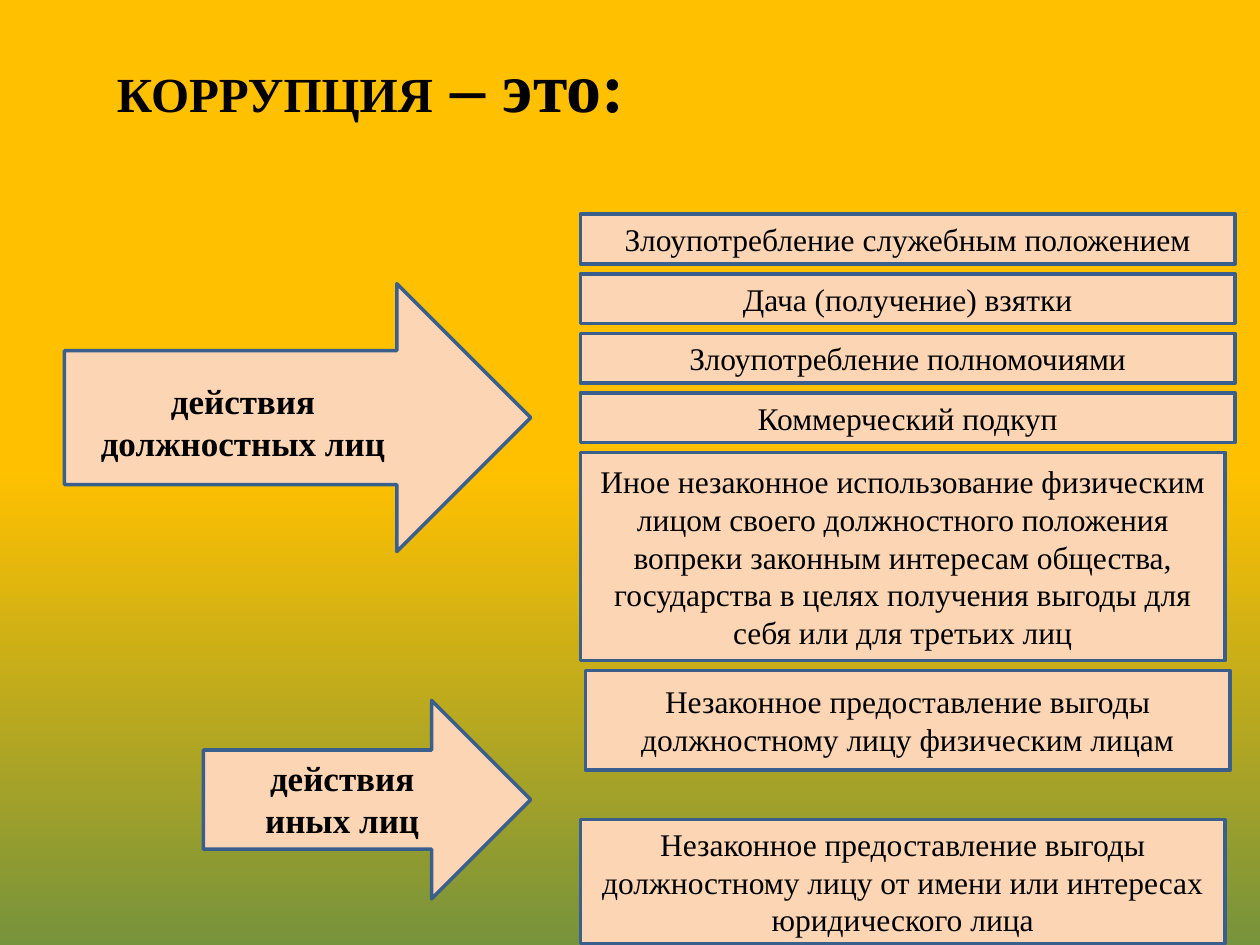
from pptx import Presentation
from pptx.dml.color import RGBColor
from pptx.enum.shapes import MSO_SHAPE
from pptx.enum.text import MSO_ANCHOR, PP_ALIGN
from pptx.util import Cm, Pt

RECTANGLE, ARROW = MSO_SHAPE.RECTANGLE, MSO_SHAPE.RIGHT_ARROW
TOP, MIDDLE = MSO_ANCHOR.TOP, MSO_ANCHOR.MIDDLE
LEFT, CENTER = PP_ALIGN.LEFT, PP_ALIGN.CENTER

FONT = "Times New Roman"
COLOURS = {
    "text": "000000",
    "fill": "FCD5B5",
    "line": "3A5F8C",
    "sky": "FFC000",
    "ground": "77933C",
}

TITLE = [("КОРРУПЦИЯ", 28), (" – это:", 40)]

# arrow place, label, label place (left, top, width, height in cm)
ACTORS = [
    ((1.3, 5.72, 9.4, 5.4), "действия должностных лиц", (1.7, 7.52, 6.4, 1.96)),
    ((4.1, 14.12, 6.6, 4.0), "действия иных лиц", (4.3, 15.12, 5.2, 1.96)),
]

# text, left, width, height, gap below (cm)
STACK_TOP = 4.32
ACTS = [
    ("Злоупотребление служебным положением", 11.7, 13.2, 1, 0.2),
    ("Дача (получение) взятки", 11.7, 13.2, 1, 0.2),
    ("Злоупотребление полномочиями", 11.7, 13.2, 1, 0.2),
    ("Коммерческий подкуп", 11.7, 13.2, 1, 0.2),
    ("Иное незаконное использование физическим лицом своего должностного "
     "положения вопреки законным интересам общества, государства в целях "
     "получения выгоды для себя или для третьих лиц", 11.7, 13, 4.2, 0.2),
    ("Незаконное предоставление выгоды должностному лицу физическим лицам",
     11.8, 13, 2, 1),
    ("Незаконное предоставление выгоды должностному лицу от имени или "
     "интересах юридического лица", 11.7, 13, 2.5, 0),
]


def colour(name):
    return RGBColor.from_string(COLOURS[name])


def write(box, spans, bold, align, anchor):
    """Fill a box with one paragraph made of (text, size) spans."""
    frame = box.text_frame
    frame.word_wrap = True
    frame.vertical_anchor = anchor
    para = frame.paragraphs[0]
    para.alignment = align
    for text, size in spans:
        span = para.add_run()
        span.text = text
        span.font.name = FONT
        span.font.size = Pt(size)
        span.font.bold = bold
        span.font.color.rgb = colour("text")


def add_figure(page, kind, place):
    figure = page.shapes.add_shape(kind, *map(Cm, place))
    figure.shadow.inherit = False
    figure.fill.solid()
    figure.fill.fore_color.rgb = colour("fill")
    figure.line.color.rgb = colour("line")
    figure.line.width = Pt(2)
    return figure


def paint_background(page):
    fill = page.background.fill
    fill.gradient()
    fill.gradient_angle = 270
    for stop, name, position in zip(fill.gradient_stops, ("sky", "ground"), (0.5, 1)):
        stop.color.rgb = colour(name)
        stop.position = position


def add_title(page):
    title = page.shapes.title
    title.left, title.top, title.width, title.height = map(Cm, (2.1, 0.53, 18.4, 3.7))
    title.text_frame.margin_top = Cm(0.32)
    write(title, TITLE, True, LEFT, TOP)


def main():
    deck = Presentation()
    deck.slide_width, deck.slide_height = Cm(25.4), Cm(19.05)
    page = deck.slides.add_slide(deck.slide_layouts[5])
    paint_background(page)
    add_title(page)

    for arrow_place, label, label_place in ACTORS:
        add_figure(page, ARROW, arrow_place)
        box = page.shapes.add_textbox(*map(Cm, label_place))
        write(box, [(label, 20)], True, CENTER, TOP)

    top = STACK_TOP
    for text, left, width, height, gap in ACTS:
        box = add_figure(page, RECTANGLE, (left, top, width, height))
        write(box, [(text, 18)], False, CENTER, MIDDLE)
        top += height + gap

    deck.save("out.pptx")


if __name__ == "__main__":
    main()
